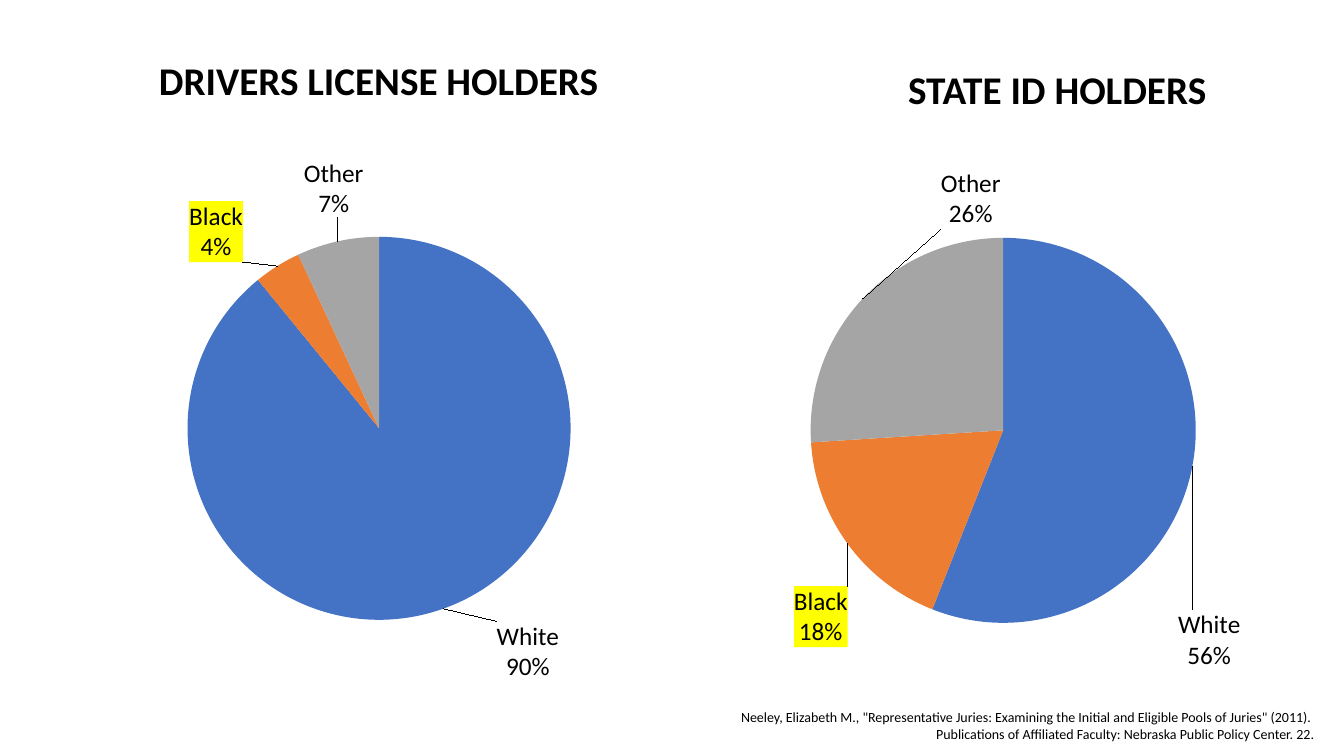
"""Build a slide comparing license and state ID holders with two pie charts."""
from lxml.etree import SubElement
from pptx import Presentation
from pptx.chart.data import CategoryChartData
from pptx.dml.color import RGBColor
from pptx.enum.chart import XL_CHART_TYPE
from pptx.enum.text import MSO_ANCHOR, PP_ALIGN
from pptx.oxml import parse_xml
from pptx.oxml.ns import nsdecls, qn
from pptx.util import Inches, Pt

FONT = "Calibri"
BLACK = "000000"
HIGHLIGHT = "FFFF00"
GROUPS = ["White", "Black", "Other"]
GROUP_COLORS = ["4472C4", "ED7D31", "A5A5A5"]
HIGHLIGHTED_GROUP = "Black"
PANELS = [
    {
        "title": "DRIVERS LICENSE HOLDERS",
        "title_box": (0.89, 0.38, 5.73, 0.7),
        "chart_box": (0.57, 1.57, 6.38, 5.32),
        "pie": (1.86, 2.35, 3.8),
        "percents": (90, 4, 7),
        "label_shifts": [(0.51, 0.07), (-0.31, 0.01), (0.27, -0.18)],
    },
    {
        "title": "STATE ID HOLDERS",
        "title_box": (8.2, 0.47, 4.57, 0.7),
        "chart_box": (7.52, 1.52, 5.13, 5.36),
        "pie": (8.04, 2.36, 3.82),
        "percents": (56, 18, 26),
        "label_shifts": [(-0.2, 1.41), (0.05, 0.39), (1.41, -0.65)],
    },
]
SOURCE_BOX = (5.45, 6.98, 7.68, 0.44)
SOURCE_LINES = [
    'Neeley, Elizabeth M., "Representative Juries: Examining the Initial and Eligible Pools of Juries" (2011). ',
    "Publications of Affiliated Faculty: Nebraska Public Policy Center. 22.",
]
LABEL_CONTENT = """<c:dLblPos val="outEnd"/><c:showLegendKey val="0"/><c:showVal val="1"/>
<c:showCatName val="1"/><c:showSerName val="0"/><c:showPercent val="0"/>
<c:showBubbleSize val="0"/><c:separator>\n</c:separator>"""
LABEL_FORMAT = '<c:numFmt formatCode="0&quot;%&quot;" sourceLinked="0"/>'


def color(value):
    return RGBColor.from_string(value)


def style_font(font, size, bold=False):
    font.name, font.size, font.bold = FONT, Pt(size), bold
    font.color.rgb = color(BLACK)


def add_text(slide, box, lines, size, alignment, bold=False):
    shape = slide.shapes.add_textbox(*map(Inches, box))
    frame = shape.text_frame
    frame.word_wrap = True
    frame.text = "\n".join(lines)
    for paragraph in frame.paragraphs:
        paragraph.alignment = alignment
        style_font(paragraph.font, size, bold)
    return frame


def add_title(slide, panel):
    frame = add_text(slide, panel["title_box"], [panel["title"]], 28, PP_ALIGN.CENTER, True)
    frame.vertical_anchor = MSO_ANCHOR.BOTTOM
    frame.paragraphs[0].line_spacing = 0.9
    frame.paragraphs[0].space_before = Pt(10)


def place_pie(chart, box, pie):
    left, top, width, height = box
    pie_left, pie_top, diameter = pie
    plot_area = chart._chartSpace.chart.plotArea
    for layout in plot_area.findall(qn("c:layout")):
        plot_area.remove(layout)
    layout = parse_xml(f"<c:layout {nsdecls('c')}/>")
    manual = SubElement(layout, qn("c:manualLayout"))
    settings = {
        "layoutTarget": "inner", "xMode": "edge", "yMode": "edge",
        "x": (pie_left - left) / width, "y": (pie_top - top) / height,
        "w": diameter / width, "h": diameter / height,
    }
    for name, value in settings.items():
        SubElement(manual, qn(f"c:{name}")).set("val", str(value))
    plot_area.insert(0, layout)


def add_labels(series, box, shifts):
    labels = ""
    for index, (group, (shift_x, shift_y)) in enumerate(zip(GROUPS, shifts)):
        fill = "<a:noFill/>"
        if group == HIGHLIGHTED_GROUP:
            fill = f'<a:solidFill><a:srgbClr val="{HIGHLIGHT}"/></a:solidFill>'
        labels += f"""<c:dLbl><c:idx val="{index}"/><c:layout><c:manualLayout>
<c:x val="{shift_x / box[2]}"/><c:y val="{shift_y / box[3]}"/></c:manualLayout></c:layout>
{LABEL_FORMAT}<c:spPr>{fill}</c:spPr>{LABEL_CONTENT}</c:dLbl>"""
    element = parse_xml(
        f"<c:dLbls {nsdecls('c', 'a')}>{labels}{LABEL_FORMAT}{LABEL_CONTENT}"
        '<c:showLeaderLines val="1"/></c:dLbls>'
    )
    series._element.find(qn("c:cat")).addprevious(element)


def add_pie(slide, panel):
    box = panel["chart_box"]
    data = CategoryChartData()
    data.categories = GROUPS
    data.add_series("Series 1", panel["percents"])
    chart = slide.shapes.add_chart(XL_CHART_TYPE.PIE, *map(Inches, box), data).chart
    chart.has_title = chart.has_legend = False
    style_font(chart.font, 18)
    chart.plots[0].vary_by_categories = True
    series = chart.plots[0].series[0]
    for index, fill_color in enumerate(GROUP_COLORS):
        fill = series.points[index].format.fill
        fill.solid()
        fill.fore_color.rgb = color(fill_color)
    place_pie(chart, box, panel["pie"])
    add_labels(series, box, panel["label_shifts"])


def main():
    presentation = Presentation()
    presentation.slide_width, presentation.slide_height = Inches(13.33), Inches(7.5)
    slide = presentation.slides.add_slide(presentation.slide_layouts[6])
    for panel in PANELS:
        add_title(slide, panel)
        add_pie(slide, panel)
    add_text(slide, SOURCE_BOX, SOURCE_LINES, 10, PP_ALIGN.RIGHT)
    presentation.save("out.pptx")


if __name__ == "__main__":
    main()
